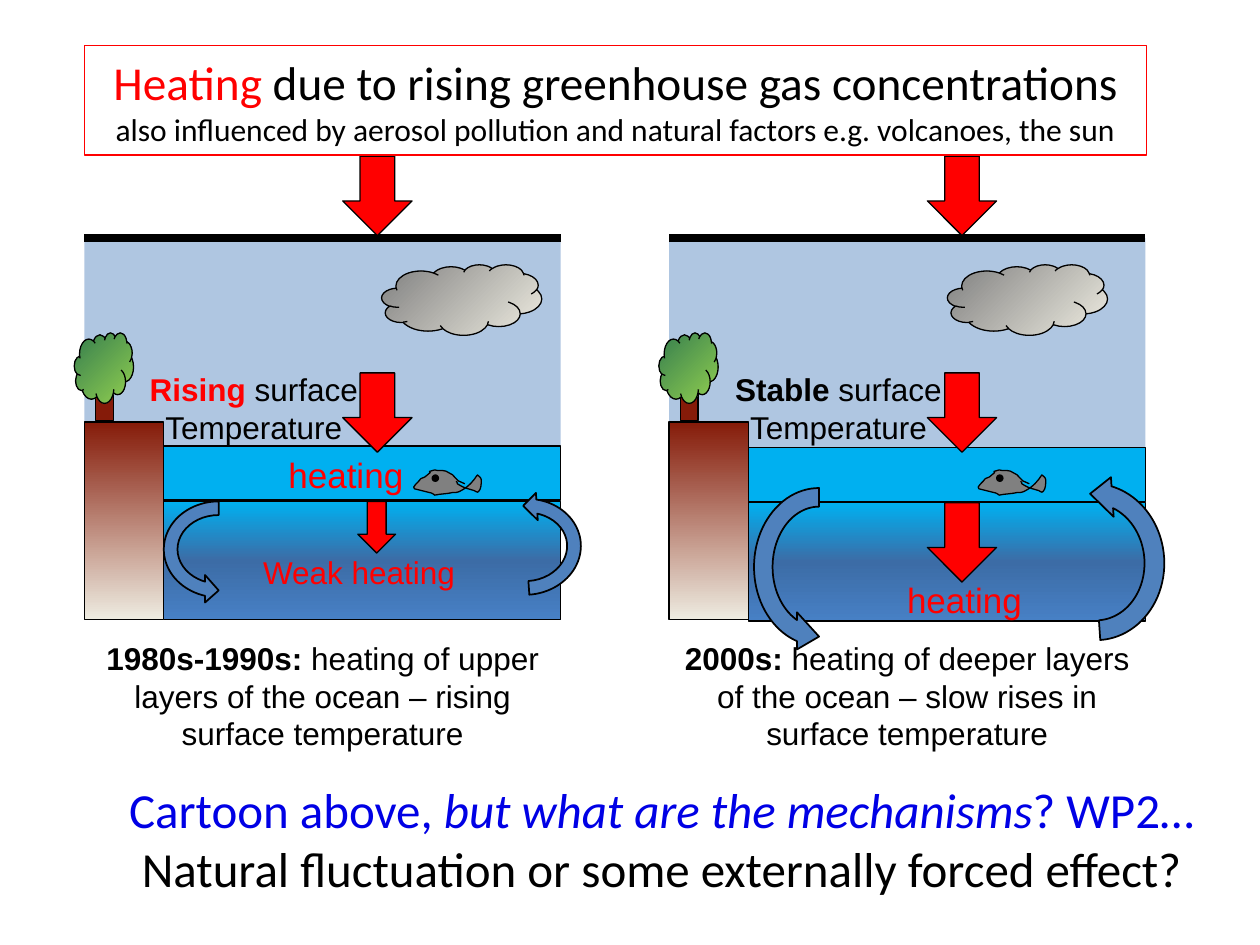
from lxml import etree
from pptx import Presentation
from pptx.dml.color import RGBColor
from pptx.enum.shapes import MSO_CONNECTOR, MSO_SHAPE
from pptx.enum.text import MSO_ANCHOR, PP_ALIGN
from pptx.oxml import parse_xml
from pptx.oxml.ns import qn
from pptx.util import Inches, Pt

RECT, DOWN, CLOUD = MSO_SHAPE.RECTANGLE, MSO_SHAPE.DOWN_ARROW, MSO_SHAPE.CLOUD
OVAL, LOOP = MSO_SHAPE.OVAL, MSO_SHAPE.CIRCULAR_ARROW
LINE = MSO_CONNECTOR.STRAIGHT
CENTER, MIDDLE, TOP = PP_ALIGN.CENTER, MSO_ANCHOR.MIDDLE, MSO_ANCHOR.TOP
NS = "http://schemas.openxmlformats.org/drawingml/2006/main"
HEX = {"red": "FF0000", "black": "000000", "blue": "0000E5", "steel": "4F81BD",
       "sea": "00B0F0", "deep": "3C6CA6", "floor": "4780C5", "soil": "851B09",
       "sand": "EEECE1", "gray": "808080", "lime": "92D050", "leaf": "367E4E"}
DOWNWARD = '<a:lin ang="5400000" scaled="0"/>'
CORNER = '<a:path path="circle"><a:fillToRect l="100000" t="100000"/></a:path>'
FISH = [(.31, .08, .36, .05, .26, .01), (.23, 0, .2, .01, .17, 0),
        (.07, .03, .19, -.01, .1, .05), (.09, .06, .08, .06, .06, .07),
        (.05, .09, -.02, .14, .01, .15), (.05, .16, .09, .17, .13, .18),
        (.14, .18, .16, .19, .17, .2), (.22, .19, .27, .19, .31, .18),
        (.33, .18, .35, .18, .37, .17), (.41, .15, .45, .12, .48, .08),
        (.49, .07, .5, .05, .51, .04), (.52, .05, .54, .06, .54, .08),
        (.54, .11, .54, .15, .52, .17), (.51, .19, .49, .16, .47, .16),
        (.4, .14, .4, .14, .35, .11), (.35, .1, .35, .1, .34, .09)]
HEAT = [("heating", {"size": Pt(20), "hue": "red"})]
WEAK = [("Weak heating", {"hue": "red"})]


def tint(color, hue):
    """Set a colour by its name."""
    color.rgb = RGBColor.from_string(HEX[hue])


def finish(shape, fill, line="black", width=.75):
    """Give a shape its fill, outline and no shadow."""
    shape.shadow.inherit = False
    if fill:
        shape.fill.solid()
        tint(shape.fill.fore_color, fill)
    else:
        shape.fill.background()
    if line:
        tint(shape.line.color, line)
        shape.line.width = Pt(width)
    else:
        shape.line.fill.background()


def draw(slide, kind, box, fill, line="black", width=.75):
    """Add a preset shape in a box given in inches."""
    shape = slide.shapes.add_shape(kind, *map(Inches, box))
    finish(shape, fill, line, width)
    return shape


def blend(shape, hues, way):
    """Replace the solid fill by an even gradient."""
    step = 100000 // (len(hues) - 1)
    stops = "".join(f'<a:gs pos="{i * step}"><a:srgbClr val="{HEX[hue]}"/></a:gs>'
                    for i, hue in enumerate(hues))
    grad = parse_xml(f'<a:gradFill xmlns:a="{NS}" rotWithShape="1">'
                     f'<a:gsLst>{stops}</a:gsLst>{way}</a:gradFill>')
    old = shape._element.spPr.find(qn("a:solidFill"))
    old.getparent().replace(old, grad)


def write(shape, paras, font="Arial", anchor=TOP):
    """Fill a shape with centred paragraphs of formatted runs."""
    frame = shape.text_frame
    frame.word_wrap = True
    frame.vertical_anchor = anchor
    for i, runs in enumerate(paras):
        para = frame.add_paragraph() if i else frame.paragraphs[0]
        para.alignment = CENTER
        for words, look in runs:
            run = para.add_run()
            run.text = words
            look = {"name": font, "size": Pt(18), "hue": "black", **look}
            tint(run.font.color, look.pop("hue"))
            for key, value in look.items():
                setattr(run.font, key, value)


def label(slide, box, *paras, **style):
    """Add a text box."""
    write(slide.shapes.add_textbox(*map(Inches, box)), paras, **style)


def arrow(slide, x, y, w=.55, h=.63):
    """Add a red heating arrow."""
    draw(slide, DOWN, (x, y, w, h), "red")


def loop(slide, box, turn):
    """Add a circulation arrow turned about its centre."""
    shape = draw(slide, LOOP, box, "steel", width=1)
    shape._element.spPr.get_or_add_xfrm().set("flipH", "1")
    shape.rotation = turn


def fish(slide, x, y):
    """Draw a fish from sampled curves."""
    last, dots = (.41, .11), []
    for a, b, c, d, e, f in FISH:
        for t in (.25, .5, .75, 1):
            u = 1 - t
            dots.append(tuple(
                Inches(o + u**3 * p + 3 * u * u * t * q + 3 * u * t * t * r + t**3 * s)
                for o, p, q, r, s in ((x, last[0], a, c, e), (y, last[1], b, d, f))))
        last = (e, f)
    path = slide.shapes.build_freeform(Inches(x + .41), Inches(y + .11))
    path.add_line_segments(dots, close=False)
    finish(path.convert_to_shape(), "gray")
    draw(slide, OVAL, (x + .15, y + .04, .05, .05), "black")


def tree(slide, x, y):
    """Draw a trunk and its crown."""
    draw(slide, RECT, (x + .17, y + .44, .14, .26), "soil")
    blend(draw(slide, CLOUD, (x, y, .47, .56), "leaf"), ("lime", "leaf"), CORNER)


def panel(slide, x, y, w, part):
    """Draw one decade: sky, land, sea, heat flow and caption."""
    sky = draw(slide, RECT, (x, y, w, 1.7), "steel", None)
    color = sky._element.spPr.find(qn("a:solidFill"))[0]
    etree.SubElement(color, qn("a:alpha")).set("val", "45000")
    sea = y + part["sea"]
    deep = draw(slide, RECT, (x + .63, sea + .44, w - .63, .94), "sea")
    blend(deep, ("sea", "deep", "floor"), DOWNWARD)
    land = draw(slide, RECT, (x, y + 1.46, .63, 1.57), "soil")
    blend(land, ("soil", "sand"), DOWNWARD)
    draw(slide, RECT, (x + .63, sea, w - .63, .43), "sea")
    tree(slide, x - .08, y + .75)
    fish(slide, x + part["fish"], y + 1.84)
    edge = slide.shapes.add_connector(LINE, *map(Inches, (x, y, x + w, y)))
    tint(edge.line.color, "black")
    edge.line.width = Pt(5)
    etree.SubElement(edge._element.spPr, qn("a:effectLst"))
    cloud = draw(slide, CLOUD, (x + part["cloud"], y + .21, 1.27, .56), "gray")
    blend(cloud, ("sand", "gray"), CORNER)
    arrow(slide, x + 2.05, y - .65)
    label(slide, (x + .41, y + 1, 1.87, .71), part["trend"])
    arrow(slide, x + 2.05, y + 1.07)
    dx, dw, dh = part["flow"]
    arrow(slide, x + dx, sea + .44, dw, dh)
    for (dx, dy, dw, dh), runs in part["notes"]:
        label(slide, (x + dx, y + dy, dw, dh), runs)
    label(slide, (x, y + 3.13, w, 1.01), part["caption"])
    for (dx, dy, dw, dh), turn in part["loops"]:
        loop(slide, (x + dx, y + dy, dw, dh), turn)


def header(slide, box):
    """Draw the framed heading."""
    write(draw(slide, RECT, box, None, "red"), [
        [("Heating", {"size": Pt(27), "hue": "red"}),
         (" due to rising greenhouse gas concentrations", {"size": Pt(27)})],
        [("also influenced by aerosol pollution and natural factors e.g. "
          "volcanoes, the sun", {})]], "Calibri", MIDDLE)


def closing(slide, box):
    """Write the closing question."""
    blue = {"size": Pt(28), "hue": "blue"}
    label(slide, box,
          [("Cartoon above, ", blue),
           ("but what are the mechanisms", {**blue, "italic": True}),
           ("? WP2…", blue)],
          [("Natural fluctuation or some externally forced effect?", {"size": Pt(28)})],
          font="Calibri", anchor=MIDDLE)


def main():
    """Build the slide."""
    deck = Presentation()
    deck.slide_width, deck.slide_height = Inches(10), Inches(7.5)
    slide = deck.slides.add_slide(deck.slide_layouts[6])
    bold = {"bold": True}
    closing(slide, (.67, 6.03, 9.16, 1.25))
    panel(slide, .67, 1.89, 3.78, {
        "sea": 1.65, "fish": 2.61, "cloud": 2.36, "flow": (2.17, .3, .41),
        "trend": [("Rising", {**bold, "hue": "red"}), (" surface Temperature", {})],
        "notes": [((1.42, 1.66, 1.31, .44), HEAT), ((1.06, 2.45, 2.24, .4), WEAK)],
        "caption": [("1980s-1990s: ", bold), ("heating of upper layers of the "
                    "ocean – rising surface temperature", {})],
        "loops": [((.63, 1.98, .87, .98), 270), ((3.07, 1.96, .87, .98), 86)]})
    panel(slide, 5.31, 1.89, 3.78, {
        "sea": 1.66, "fish": 2.45, "cloud": 2.21, "flow": (2.05, .55, .63),
        "trend": [("Stable", bold), (" surface Temperature", {})],
        "notes": [((1.69, 2.65, 1.31, .44), HEAT)],
        "caption": [("2000s: ", bold), ("heating of deeper layers of the "
                    "ocean – slow rises in surface temperature", {})],
        "loops": [((.49, 2.02, 1.4, 1.18), 270), ((2.68, 1.94, 1.4, 1.26), 86)]})
    header(slide, (.67, .36, 8.43, .87))
    deck.save("out.pptx")


if __name__ == "__main__":
    main()
